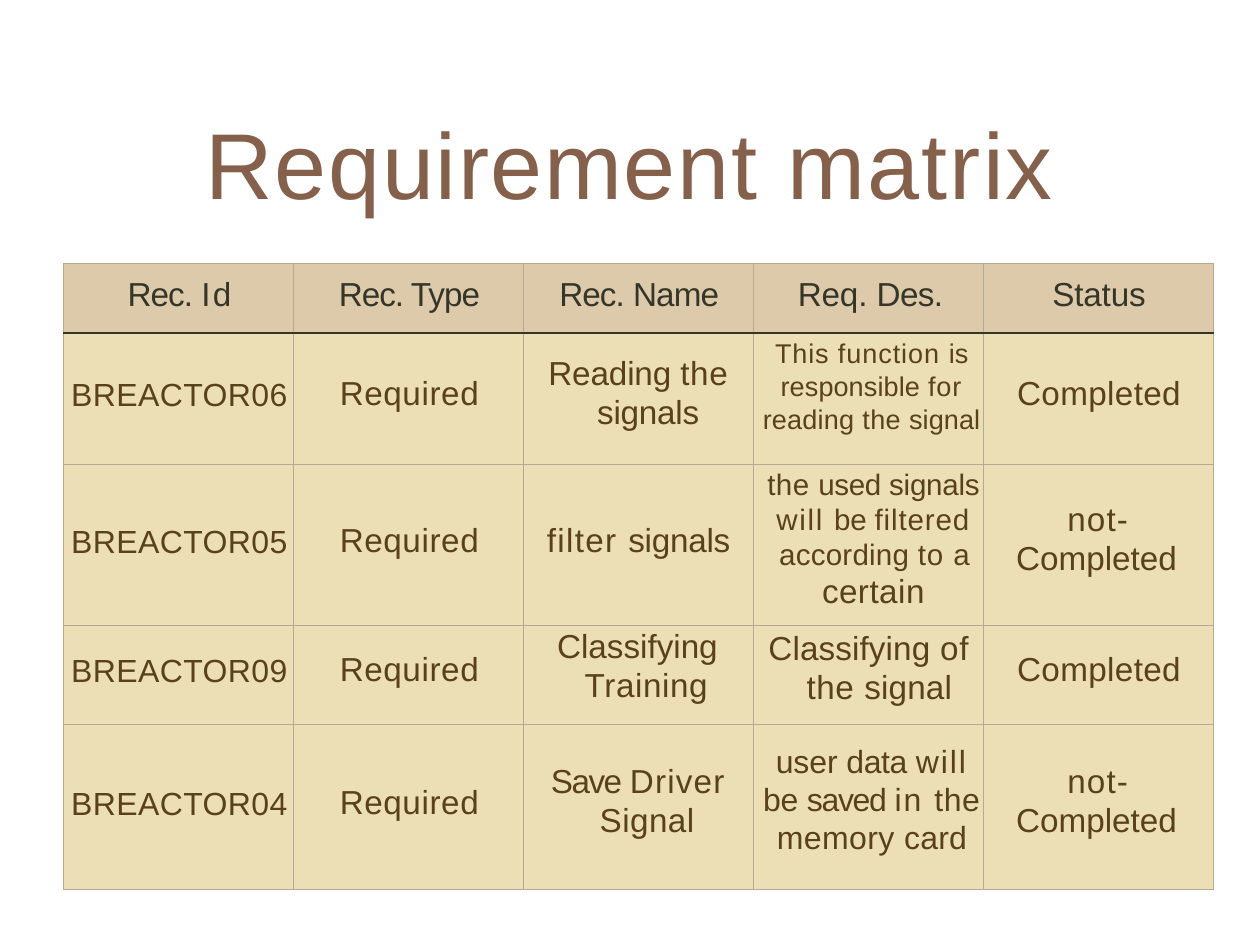
from dataclasses import dataclass

from pptx import Presentation
from pptx.dml.color import RGBColor
from pptx.enum.text import MSO_ANCHOR, PP_ALIGN
from pptx.oxml.ns import qn
from pptx.util import Cm, Pt
from lxml import etree

CENTER, LEFT = PP_ALIGN.CENTER, PP_ALIGN.LEFT
TOP = MSO_ANCHOR.TOP

TITLE_BROWN = RGBColor(0x85, 0x60, 0x4A)
HEADER_INK = RGBColor(0x35, 0x35, 0x28)
BODY_INK = RGBColor(0x59, 0x41, 0x1C)
HEADER_FILL = RGBColor(0xDC, 0xCA, 0xAB)
BODY_FILL = RGBColor(0xEC, 0xDE, 0xB5)
GRID = RGBColor(0xB8, 0xA9, 0x92)
FONT = "Arial"
BORDER_WIDTH = Pt(1)


@dataclass
class Entry:
    """Cell text as (words, letter spacing in points[, size]) runs; lengths in cm."""
    runs: list
    top: float
    size: float = 27
    align: int = CENTER
    margin: float = 0.04
    indent: float = 0
    line_spacing: float = 1.0


def heading(*runs, **format_values):
    return Entry(list(runs), 0.36, **format_values)


def identifier(number, top):
    return Entry([(f"BREACTOR{number}", 0.3)], top, size=26)


def required(top):
    return Entry([("Required", 0.5)], top)


def completed(top):
    return Entry([("Completed", 0.3)], top)


def not_completed(top):
    return Entry([("not- ", 0.9), ("Completed", 0)], top, align=LEFT,
                 margin=0.94, indent=1.47, line_spacing=1.05)


def hanging(runs, top, margin, indent):
    return Entry(runs, top, align=LEFT, margin=margin, indent=indent, line_spacing=1.05)


COLUMN_WIDTH = 6.59
ROW_HEIGHTS = [1.98, 3.76, 4.62, 2.84, 4.75]
ROWS = [
    [heading(("Rec. ", -0.8), ("Id", 1.9)),
     heading(("Rec. Type", -0.8)),
     heading(("Rec. ", -0.8), ("Name", -0.7)),
     heading(("Req. ", -0.1), ("Des.", -0.5), align=LEFT, margin=1.27),
     heading(("Status", -0.1))],
    [identifier("06", 1.27), required(1.22),
     hanging([("Reading ", -0.1), ("the ", 0.5), ("signals", -0.2)], 0.58, 2.11, -1.4),
     Entry([("This ", 0.7), ("function ", 0.8), ("is ", -0.1), ("responsible ", 0.1),
            ("for ", 0.8), ("reading ", 0.2), ("the ", 0.3), ("signal", 0.1)],
           0.08, size=22, margin=0.18, line_spacing=1.1),
     completed(1.22)],
    [identifier("05", 1.73), required(1.68),
     Entry([("filter ", 1.1), ("signals", -0.2)], 1.68, margin=0),
     Entry([("the ", 0.4), ("used ", -0.3), ("signals ", -0.2), ("will ", 1.4),
            ("be ", -0.2), ("filtered ", 0.7), ("according ", 0.2), ("to ", 0.7),
            ("a ", -1.9), ("certain", 0.4, 27)],
           0.08, size=24, margin=0.28, line_spacing=1.06),
     not_completed(1.02)],
    [identifier("09", 0.81), required(0.76),
     hanging([("Classifying ", 0), ("Training", 0.5)], 0.03, 1.75, -0.79),
     hanging([("Classifying ", 0.1), ("of ", 0.7), ("the ", 0.5), ("signal", 0.1)],
             0.1, 1.52, -1.09),
     completed(0.76)],
    [identifier("04", 1.78), required(1.73),
     hanging([("Save ", -1.2), ("Driver ", 1), ("Signal", 0.4)], 1.07, 2.18, -1.4),
     Entry([("user ", -0.1), ("data ", -0.4), ("will ", 1.6), ("be ", -0.3),
            ("saved ", -1.1), ("in ", 1.6), ("the ", 0.5), ("memory ", 0.3), ("card", 0.1)],
           0.53, size=26, margin=0.2, line_spacing=1.06),
     not_completed(1.07)],
]


def set_values(target, values):
    for name, value in values.items():
        setattr(target, name, value)


def add_runs(paragraph, runs, size, color):
    for words, spacing, *own_size in runs:
        run = paragraph.add_run()
        run.text = words
        set_values(run.font, {"name": FONT, "size": Pt(own_size[0] if own_size else size)})
        run.font.color.rgb = color
        run._r.get_or_add_rPr().set("spc", str(round(spacing * 100)))


def set_borders(cell, colors):
    properties = cell._tc.get_or_add_tcPr()
    for position, (side, color) in enumerate(colors.items()):
        line = etree.Element(qn(f"a:{side}"), w=str(BORDER_WIDTH))
        fill = etree.SubElement(line, qn("a:solidFill"))
        etree.SubElement(fill, qn("a:srgbClr"), val=str(color))
        properties.insert(position, line)


def fill_cell(cell, entry, row_index):
    is_header = row_index == 0
    set_values(cell, {"margin_left": 0, "margin_right": 0, "margin_bottom": 0,
                      "margin_top": Cm(entry.top), "vertical_anchor": TOP})
    cell.fill.solid()
    cell.fill.fore_color.rgb = HEADER_FILL if is_header else BODY_FILL
    set_borders(cell, {"lnL": GRID, "lnR": GRID,
                       "lnT": HEADER_INK if row_index == 1 else GRID,
                       "lnB": HEADER_INK if is_header else GRID})
    paragraph = cell.text_frame.paragraphs[0]
    set_values(paragraph, {"alignment": entry.align, "line_spacing": entry.line_spacing})
    paragraph_properties = paragraph._p.get_or_add_pPr()
    paragraph_properties.set("marL", str(Cm(entry.margin)))
    paragraph_properties.set("indent", str(Cm(entry.indent)))
    add_runs(paragraph, entry.runs, entry.size, HEADER_INK if is_header else BODY_INK)


def place_title(slide, left, top, width, height):
    title = slide.shapes.title
    set_values(title, {"left": Cm(left), "top": Cm(top),
                       "width": Cm(width), "height": Cm(height)})
    set_values(title.text_frame, {"margin_left": Cm(0.03), "margin_right": 0,
                                  "margin_top": Cm(0.03), "margin_bottom": 0,
                                  "vertical_anchor": TOP, "word_wrap": True})
    paragraph = title.text_frame.paragraphs[0]
    paragraph.alignment = LEFT
    add_runs(paragraph, [("Requirement ", 1.4), ("matrix", 1.8)], 76, TITLE_BROWN)


def add_requirement_table(slide, left, top):
    column_count = len(ROWS[0])
    table = slide.shapes.add_table(
        len(ROWS), column_count, Cm(left), Cm(top),
        Cm(COLUMN_WIDTH * column_count), Cm(sum(ROW_HEIGHTS))).table
    set_values(table, {"first_row": False, "horz_banding": False})
    for column in table.columns:
        column.width = Cm(COLUMN_WIDTH)
    for row_index, entries in enumerate(ROWS):
        table.rows[row_index].height = Cm(ROW_HEIGHTS[row_index])
        for column_index, entry in enumerate(entries):
            fill_cell(table.cell(row_index, column_index), entry, row_index)


def main():
    presentation = Presentation()
    set_values(presentation, {"slide_width": Cm(36.12), "slide_height": Cm(27.1)})
    slide = presentation.slides.add_slide(presentation.slide_layouts[5])
    place_title(slide, 5.87, 3, 24.38, 3.28)
    add_requirement_table(slide, 1.83, 7.57)
    presentation.save("out.pptx")


if __name__ == "__main__":
    main()
